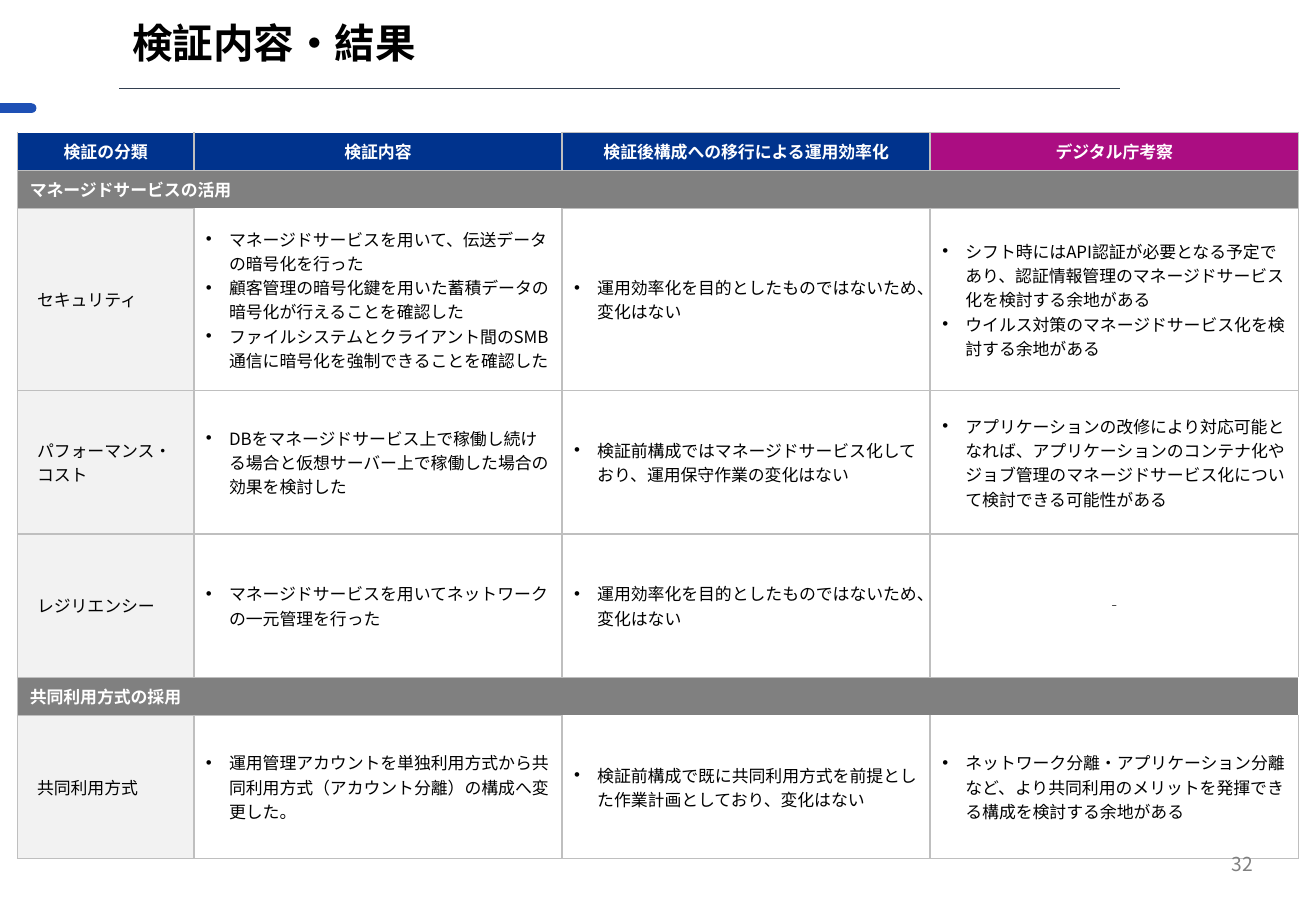
from dataclasses import dataclass

from lxml import etree
from pptx import Presentation
from pptx.dml.color import RGBColor
from pptx.enum.shapes import MSO_CONNECTOR, MSO_SHAPE
from pptx.enum.text import MSO_ANCHOR, PP_ALIGN
from pptx.oxml.ns import qn
from pptx.util import Inches, Pt

LEFT, CENTER, RIGHT = PP_ALIGN.LEFT, PP_ALIGN.CENTER, PP_ALIGN.RIGHT
MIDDLE = MSO_ANCHOR.MIDDLE
STRAIGHT = MSO_CONNECTOR.STRAIGHT
ROUNDED = MSO_SHAPE.ROUNDED_RECTANGLE
BLANK_LAYOUT = 6


@dataclass(frozen=True)
class Theme:
    """Colours and type sizes of the slide."""
    font: str = "Noto Sans CJK JP"
    ink: str = "000000"
    white: str = "FFFFFF"
    navy: str = "00338D"
    magenta: str = "AB0D82"
    section: str = "808080"
    label: str = "F2F2F2"
    border: str = "BFBFBF"
    rule: str = "333F50"
    accent: str = "1E50B5"
    title_size: float = 24
    body_size: float = 10
    number_size: float = 11.4


THEME = Theme()
COLUMN_WIDTHS = [14.5] + [30.3] * 3
HEAD_ROW, BODY_ROW, TALL_ROW = 3.13, 11.8, 15
TALL_POINTS = 3
HEADINGS = ["検証の分類", "検証内容", "検証後構成への移行による運用効率化", "デジタル庁考察"]
NO_CHANGE = ["運用効率化を目的としたものではないため、変化はない"]
SECTIONS = [
    ("マネージドサービスの活用", [
        ("セキュリティ", [
            ["マネージドサービスを用いて、伝送データの暗号化を行った",
             "顧客管理の暗号化鍵を用いた蓄積データの暗号化が行えることを確認した",
             "ファイルシステムとクライアント間のSMB通信に暗号化を強制できることを確認した"],
            NO_CHANGE,
            ["シフト時にはAPI認証が必要となる予定であり、認証情報管理のマネージドサービス化を検討する余地がある",
             "ウイルス対策のマネージドサービス化を検討する余地がある"]]),
        ("パフォーマンス・コスト", [
            ["DBをマネージドサービス上で稼働し続ける場合と仮想サーバー上で稼働した場合の効果を検討した"],
            ["検証前構成ではマネージドサービス化しており、運用保守作業の変化はない"],
            ["アプリケーションの改修により対応可能となれば、アプリケーションのコンテナ化やジョブ管理の"
             "マネージドサービス化について検討できる可能性がある"]]),
        ("レジリエンシー", [
            ["マネージドサービスを用いてネットワークの一元管理を行った"], NO_CHANGE, []]),
    ]),
    ("共同利用方式の採用", [
        ("共同利用方式", [
            ["運用管理アカウントを単独利用方式から共同利用方式（アカウント分離）の構成へ変更した。"],
            ["検証前構成で既に共同利用方式を前提とした作業計画としており、変化はない"],
            ["ネットワーク分離・アプリケーション分離など、より共同利用のメリットを発揮できる構成を検討する余地がある"]]),
    ]),
]
WHITE_EDGES = {(0, 0): "T", (0, 1): "T", (2, 1): "T", (6, 2): "T", (6, 3): "T",
               (5, 0): "R", (5, 3): "R"}


def grid(*steps):
    """Turn grid steps of a tenth of an inch into lengths."""
    return [Inches(step / 10) for step in steps]


def colour(value):
    """Turn a hex string into a colour."""
    return RGBColor.from_string(value)


def write(para, words, size, ink, bold=False, align=LEFT):
    """Add one styled run to a paragraph."""
    para.alignment = align
    span = para.add_run()
    span.text = words
    font = span.font
    font.name, font.size, font.bold = THEME.font, Pt(size), bold
    font.color.rgb = colour(ink)
    etree.SubElement(font._element, qn("a:ea"), typeface=THEME.font)


def add_text(page, place, words, size, ink, bold=False, align=LEFT):
    """Add a one-line text box and return its paragraph."""
    frame = page.shapes.add_textbox(*grid(*place)).text_frame
    frame.word_wrap = True
    frame.vertical_anchor = MIDDLE
    para = frame.paragraphs[0]
    write(para, words, size, ink, bold, align)
    return para


def add_rule(page, start, end):
    """Add the thin line under the title."""
    rule = page.shapes.add_connector(STRAIGHT, *grid(*start, *end))
    rule.line.color.rgb = colour(THEME.rule)
    rule.line.width = Pt(0.5)
    etree.SubElement(rule._element.spPr, qn("a:effectLst"))


def add_accent(page, place):
    """Add the rounded bar at the left edge."""
    bar = page.shapes.add_shape(ROUNDED, *grid(*place))
    bar.adjustments[0] = 0.5
    bar.shadow.inherit = False
    bar.fill.solid()
    bar.fill.fore_color.rgb = colour(THEME.accent)
    bar.line.fill.background()


def dress(cell, fill, white_edge=None):
    """Give a cell its fill, anchor and four borders."""
    cell.vertical_anchor = MIDDLE
    cell.fill.solid()
    cell.fill.fore_color.rgb = colour(fill)
    properties = cell._tc.get_or_add_tcPr()
    for index, side in enumerate("LRTB"):
        edge = etree.Element(qn(f"a:ln{side}"), w=str(Pt(1)))
        paint = etree.SubElement(edge, qn("a:solidFill"))
        value = THEME.white if side == white_edge else THEME.border
        etree.SubElement(paint, qn("a:srgbClr"), val=value)
        properties.insert(index, edge)


def write_bullets(cell, points):
    """Write a bulleted list, or a centred dash when it is empty."""
    frame = cell.text_frame
    if not points:
        write(frame.paragraphs[0], "‐", THEME.body_size, THEME.ink, align=CENTER)
    for index, point in enumerate(points):
        para = frame.add_paragraph() if index else frame.paragraphs[0]
        write(para, point, THEME.body_size, THEME.ink)
        properties = para._p.get_or_add_pPr()
        indent = Inches(0.19)
        properties.set("marL", str(indent))
        properties.set("indent", str(-indent))
        etree.SubElement(properties, qn("a:buFont"), typeface="Arial")
        etree.SubElement(properties, qn("a:buChar"), char="•")


def fill_row(table, row, fills):
    """Dress every cell of a row and return the cells."""
    cells = list(table.rows[row].cells)
    for column, (cell, fill) in enumerate(zip(cells, fills)):
        dress(cell, fill, WHITE_EDGES.get((row, column)))
    return cells


def row_heights():
    """List the row heights, taller where a cell holds many points."""
    heights = [HEAD_ROW]
    for _, items in SECTIONS:
        heights.append(HEAD_ROW)
        for _, findings in items:
            most = max(len(points) for points in findings)
            heights.append(TALL_ROW if most >= TALL_POINTS else BODY_ROW)
    return heights


def add_results(page, left, top):
    """Add the table of verification results."""
    heights = row_heights()
    place = grid(left, top, sum(COLUMN_WIDTHS), sum(heights))
    table = page.shapes.add_table(len(heights), len(COLUMN_WIDTHS), *place).table
    table.first_row = table.horz_banding = False
    for column, width in zip(table.columns, grid(*COLUMN_WIDTHS)):
        column.width = width
    for line, height in zip(table.rows, grid(*heights)):
        line.height = height

    cells = fill_row(table, 0, [THEME.navy] * 3 + [THEME.magenta])
    for cell, heading in zip(cells, HEADINGS):
        write(cell.text_frame.paragraphs[0], heading, THEME.body_size, THEME.white, True, CENTER)
    row = 1
    for section, items in SECTIONS:
        cells = fill_row(table, row, [THEME.section] * 4)
        cells[0].merge(cells[-1])
        write(cells[0].text_frame.paragraphs[0], section, THEME.body_size, THEME.white, True)
        for row, (label, findings) in enumerate(items, row + 1):
            cells = fill_row(table, row, [THEME.label] + [THEME.white] * 3)
            cells[0].margin_left, cells[0].margin_right = grid(1.6, 0.8)
            write(cells[0].text_frame.paragraphs[0], label, THEME.body_size, THEME.ink)
            for cell, points in zip(cells[1:], findings):
                write_bullets(cell, points)
        row += 1


def main():
    """Build the slide and save it."""
    deck = Presentation()
    deck.slide_width, deck.slide_height = grid(108.3, 75)
    page = deck.slides.add_slide(deck.slide_layouts[BLANK_LAYOUT])
    add_accent(page, (-0.8, 8.5, 3.8, 0.8))
    title = add_text(page, (9.9, 0.5, 84.9, 6.4), "検証内容・結果",
                     THEME.title_size, THEME.ink, bold=True)
    title.line_spacing = 0.9
    add_rule(page, (9.8, 7.3), (92.2, 7.3))
    add_results(page, 1.45, 10.9)
    add_text(page, (79.7, 69.1, 24.4, 4), "32", THEME.number_size, THEME.section, align=RIGHT)
    deck.save("out.pptx")


if __name__ == "__main__":
    main()
